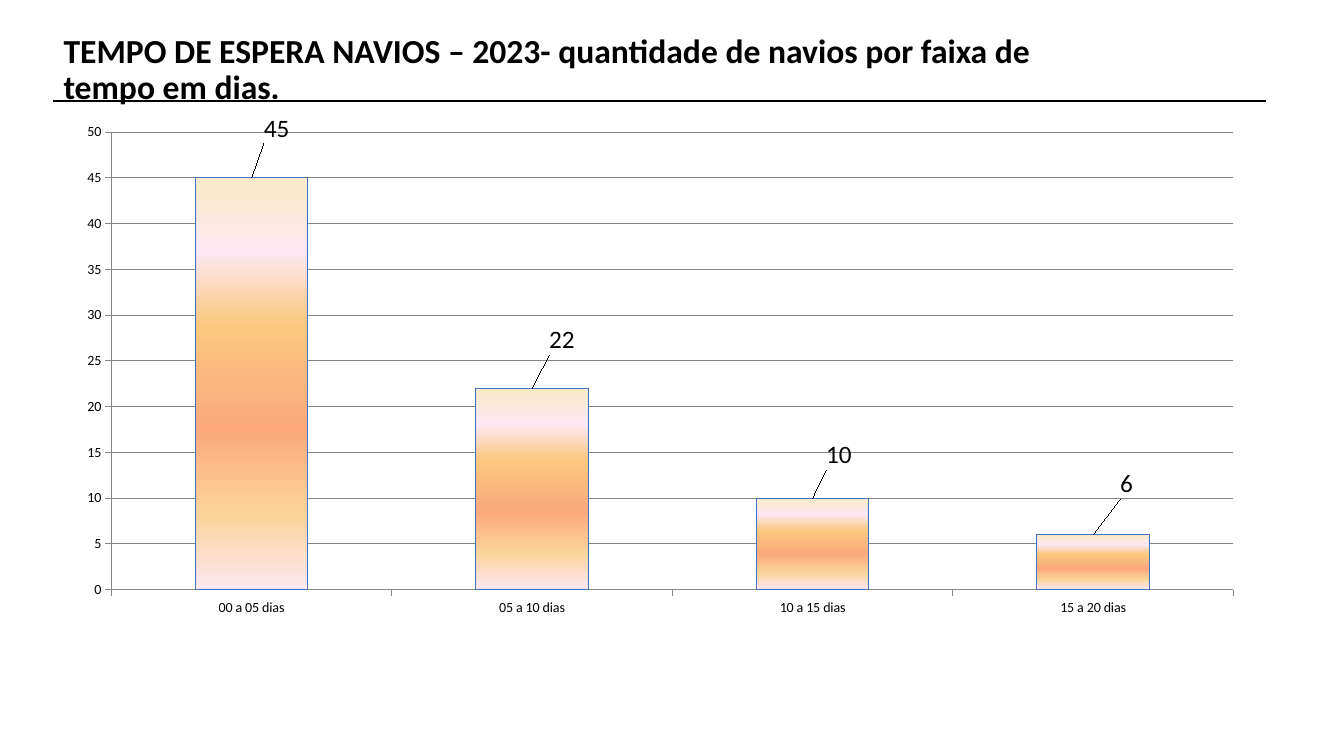
"""Build a slide charting the number of ships by waiting time in 2023."""
import dataclasses

import lxml.etree
import pptx
import pptx.chart.data
import pptx.dml.color
import pptx.enum.chart
import pptx.enum.shapes
import pptx.enum.text
import pptx.oxml
import pptx.oxml.ns
import pptx.util

SLIDE_WIDTH = pptx.util.Inches(13.33)
SLIDE_HEIGHT = pptx.util.Inches(7.5)
LEFT_MARGIN = 0.53 / 13.33
RULE_RIGHT = 12.56 / 13.33
RULE_HEIGHT = 1 / 7.5

TITLE = ("TEMPO DE ESPERA NAVIOS – 2023- quantidade de navios "
         "por faixa de tempo em dias.")
SHIPS_BY_WAIT = {"00 a 05 dias": 45, "05 a 10 dias": 22,
                 "10 a 15 dias": 10, "15 a 20 dias": 6}
LABEL_SHIFTS = [(0.021, -0.06), (0.025, -0.057), (0.022, -0.047), (0.028, -0.062)]
PLOT_AREA = {"x": 0.04, "y": 0.034, "w": 0.94, "h": 0.895}


@dataclasses.dataclass(frozen=True)
class Theme:
    """Colours, font and type sizes of the slide."""
    font: str = "Calibri"
    ink: str = "000000"
    grid: str = "868686"
    bar_edge: str = "4472C4"
    bar_stops: tuple = ((0, "FBEAC7"), (18, "FEE7F2"), (36, "FAC77D"),
                        (61, "FBA97D"), (82, "FBD49C"), (100, "FEE7F2"))
    title_size: int = 24
    label_size: int = 18
    axis_size: int = 10


THEME = Theme()


def across(share):
    """Return a share of the slide's width."""
    return round(SLIDE_WIDTH * share)


def down(share):
    """Return a share of the slide's height."""
    return round(SLIDE_HEIGHT * share)


def style_font(font, size, bold=False):
    """Apply the theme's font and ink at a given size."""
    font.name = THEME.font
    font.size = pptx.util.Pt(size)
    font.bold = bold
    font.color.rgb = pptx.dml.color.RGBColor.from_string(THEME.ink)


def style_line(line, colour, width):
    """Set the colour and width of a line."""
    line.color.rgb = pptx.dml.color.RGBColor.from_string(colour)
    line.width = pptx.util.Pt(width)


def add_sub(parent, tag, **attributes):
    """Append a namespaced child element with attributes."""
    child = lxml.etree.SubElement(parent, pptx.oxml.ns.qn(tag))
    for name, value in attributes.items():
        child.set(name, str(value))
    return child


def make_layout(**settings):
    """Return a manual chart layout element."""
    layout = pptx.oxml.parse_xml(f'<c:layout {pptx.oxml.ns.nsdecls("c")}/>')
    manual = add_sub(layout, "c:manualLayout")
    for name, value in settings.items():
        add_sub(manual, f"c:{name}", val=value)
    return layout


def set_title(slide):
    """Place and format the title placeholder."""
    title = slide.shapes.title
    title.left, title.top = across(LEFT_MARGIN), down(0.29 / 7.5)
    title.width, title.height = across(10.21 / 13.33), down(0.7 / 7.5)
    frame = title.text_frame
    frame.word_wrap = True
    frame.auto_size = pptx.enum.text.MSO_AUTO_SIZE.NONE
    frame.vertical_anchor = pptx.enum.text.MSO_ANCHOR.TOP
    paragraph = frame.paragraphs[0]
    paragraph.alignment = pptx.enum.text.PP_ALIGN.LEFT
    paragraph.line_spacing = 0.9
    heading = paragraph.add_run()
    heading.text = TITLE
    style_font(heading.font, THEME.title_size, bold=True)


def add_rule(slide):
    """Draw the rule below the title."""
    rule = slide.shapes.add_connector(
        pptx.enum.shapes.MSO_CONNECTOR.STRAIGHT,
        across(LEFT_MARGIN), down(RULE_HEIGHT), across(RULE_RIGHT), down(RULE_HEIGHT))
    style_line(rule.line, THEME.ink, 1.5)
    add_sub(rule._element.spPr, "a:effectLst")


def style_axes(chart):
    """Format both axes and the horizontal gridlines."""
    for axis in (chart.category_axis, chart.value_axis):
        axis.major_tick_mark = pptx.enum.chart.XL_TICK_MARK.OUTSIDE
        axis.minor_tick_mark = pptx.enum.chart.XL_TICK_MARK.NONE
        style_font(axis.tick_labels.font, THEME.axis_size)
        style_line(axis.format.line, THEME.grid, 0.75)
    counts = chart.value_axis
    counts.minimum_scale, counts.maximum_scale, counts.major_unit = 0, 50, 5
    counts.has_major_gridlines = True
    style_line(counts.major_gridlines.format.line, THEME.grid, 0.75)


def fill_bars(ships):
    """Give the bars their gradient and edge."""
    ships.format.fill.gradient()
    ships.format.fill.gradient_angle = 270
    stops = ships._element.find(".//" + pptx.oxml.ns.qn("a:gsLst"))
    for stop in list(stops):
        stops.remove(stop)
    for position, colour in THEME.bar_stops:
        stop = add_sub(stops, "a:gs", pos=position * 1000)
        add_sub(stop, "a:srgbClr", val=colour)
    style_line(ships.format.line, THEME.bar_edge, 0.75)


def label_bars(ships):
    """Show each bar's value, shifted from its usual place."""
    ships.data_labels.show_value = True
    style_font(ships.data_labels.font, THEME.label_size)
    for index in range(len(LABEL_SHIFTS)):
        label = ships.points[index].data_label
        style_font(label.font, THEME.label_size)
        label.position = pptx.enum.chart.XL_LABEL_POSITION.OUTSIDE_END
    labels = ships._element.iter(pptx.oxml.ns.qn("c:dLbl"))
    for label, (x, y) in zip(labels, LABEL_SHIFTS):
        label.insert(1, make_layout(x=x, y=y))


def add_wait_chart(slide):
    """Add the column chart of ships by waiting time."""
    waits = pptx.chart.data.CategoryChartData()
    waits.categories = list(SHIPS_BY_WAIT)
    waits.add_series("Series 1", list(SHIPS_BY_WAIT.values()))
    chart = slide.shapes.add_chart(
        pptx.enum.chart.XL_CHART_TYPE.COLUMN_CLUSTERED,
        across(0.63 / 13.33), down(1.12 / 7.5),
        across(11.84 / 13.33), down(5.09 / 7.5), waits).chart
    chart.has_title = False
    chart.has_legend = False
    style_font(chart.font, THEME.axis_size)
    style_axes(chart)
    columns = chart.plots[0]
    columns.gap_width = 150
    columns.vary_by_categories = False
    fill_bars(columns.series[0])
    label_bars(columns.series[0])
    plot_area = chart._chartSpace.chart.plotArea
    for layout in plot_area.findall(pptx.oxml.ns.qn("c:layout")):
        plot_area.remove(layout)
    plot_area.insert(0, make_layout(layoutTarget="inner", xMode="edge",
                                    yMode="edge", **PLOT_AREA))


def main():
    """Build and save the slide."""
    deck = pptx.Presentation()
    deck.slide_width, deck.slide_height = SLIDE_WIDTH, SLIDE_HEIGHT
    slide = deck.slides.add_slide(deck.slide_layouts[5])
    add_rule(slide)
    set_title(slide)
    add_wait_chart(slide)
    deck.save("out.pptx")


if __name__ == "__main__":
    main()
